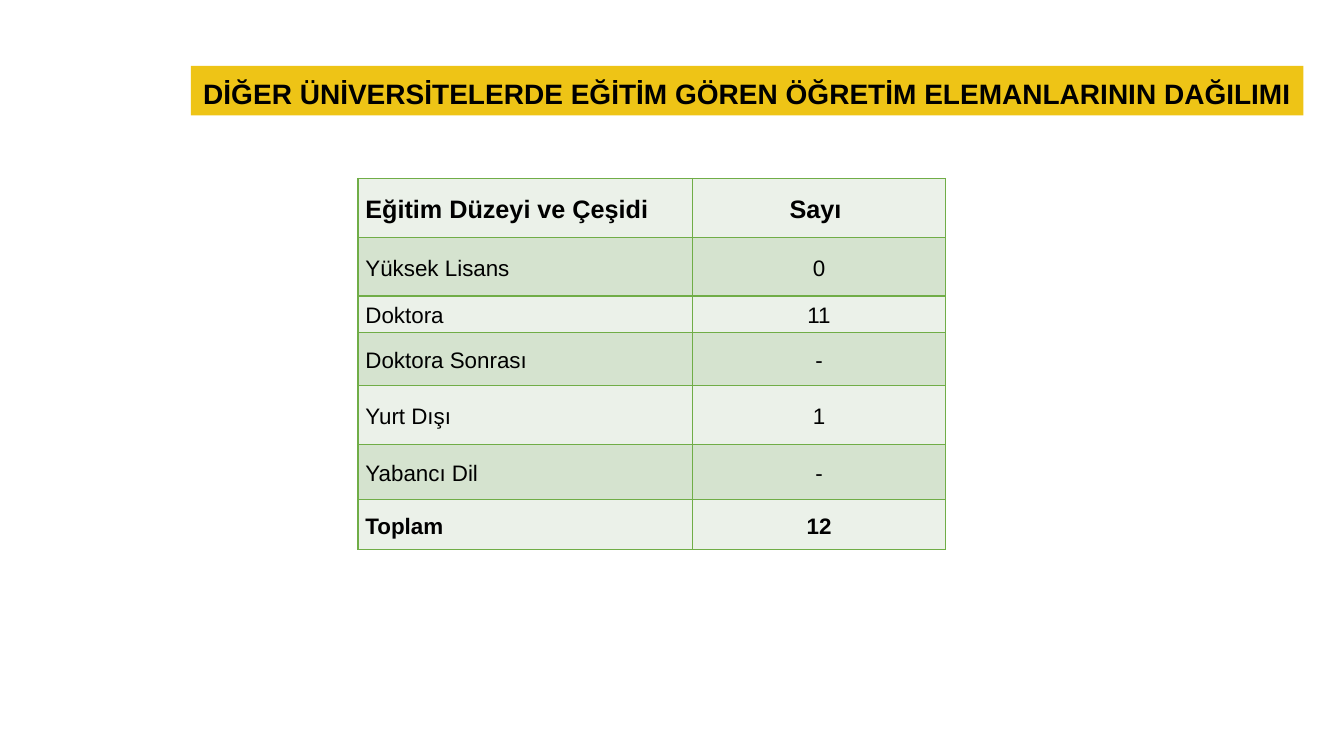
from pptx import Presentation
from pptx import util as u
from pptx.dml.color import RGBColor
from pptx.enum import text
from pptx.oxml import parse_xml
from pptx.oxml.ns import nsdecls

BLACK = RGBColor(0x00, 0x00, 0x00)
GOLD = RGBColor(0xEE, 0xC4, 0x16)
PALE_GREEN = RGBColor(0xEB, 0xF1, 0xE9)
SOFT_GREEN = RGBColor(0xD5, 0xE3, 0xCF)
BORDER_GREEN = RGBColor(0x70, 0xAD, 0x47)

# Label, count, row height in cm
ROWS = [
    ("Eğitim Düzeyi ve Çeşidi", "Sayı ", 1.48),
    ("Yüksek Lisans", "0", 1.48),
    ("Doktora", "11", 0.91),
    ("Doktora Sonrası", "-", 1.35),
    ("Yurt Dışı", "1", 1.48),
    ("Yabancı Dil", "-", 1.39),
    ("Toplam", "12", 1.26),
]


def write(frame, words, size, bold, alignment):
    para = frame.paragraphs[0]
    para.alignment = alignment
    para.line_spacing = 1.15
    para.space_before = u.Pt(0)
    span = para.add_run()
    span.text = words
    span.font.name = "Arial"
    span.font.size = u.Pt(size)
    span.font.bold = bold
    span.font.color.rgb = BLACK


deck = Presentation()
deck.slide_width = u.Cm(33.87)
deck.slide_height = u.Cm(19.05)
page = deck.slides.add_slide(deck.slide_layouts[5])

# Title band
title = page.shapes.title
title.left, title.top = u.Cm(4.81), u.Cm(1.66)
title.width, title.height = u.Cm(28.04), u.Cm(1.25)
title.fill.solid()
title.fill.fore_color.rgb = GOLD
title.text_frame.word_wrap = False
title.text_frame.auto_size = text.MSO_AUTO_SIZE.NONE
title.text_frame.vertical_anchor = text.MSO_ANCHOR.MIDDLE
write(title.text_frame,
      "DİĞER ÜNİVERSİTELERDE EĞİTİM GÖREN ÖĞRETİM ELEMANLARININ DAĞILIMI",
      20, True, text.PP_ALIGN.CENTER)

# Table of education levels
table = page.shapes.add_table(len(ROWS), 2, u.Cm(9.02), u.Cm(4.5),
                              u.Cm(14.81), u.Cm(9.35)).table
table.columns[0].width = u.Cm(8.43)
table.columns[1].width = u.Cm(6.38)

for row, (label, count, height) in enumerate(ROWS):
    table.rows[row].height = u.Cm(height)
    size = 18 if row == 0 else 16
    bold = row in (0, len(ROWS) - 1)
    columns = [(label, text.PP_ALIGN.JUSTIFY), (count, text.PP_ALIGN.CENTER)]
    for column, (words, alignment) in enumerate(columns):
        cell = table.cell(row, column)
        cell.margin_left = cell.margin_right = u.Cm(0.19)
        cell.margin_top = cell.margin_bottom = 0
        cell.vertical_anchor = text.MSO_ANCHOR.MIDDLE
        # Borders go before the fill
        for side in ("lnL", "lnR", "lnT", "lnB"):
            cell._tc.get_or_add_tcPr().append(parse_xml(
                f'<a:{side} {nsdecls("a")} w="{u.Pt(1)}"><a:solidFill>'
                f'<a:srgbClr val="{BORDER_GREEN}"/></a:solidFill></a:{side}>'))
        cell.fill.solid()
        cell.fill.fore_color.rgb = SOFT_GREEN if row % 2 else PALE_GREEN
        write(cell.text_frame, words, size, bold, alignment)

deck.save("out.pptx")
